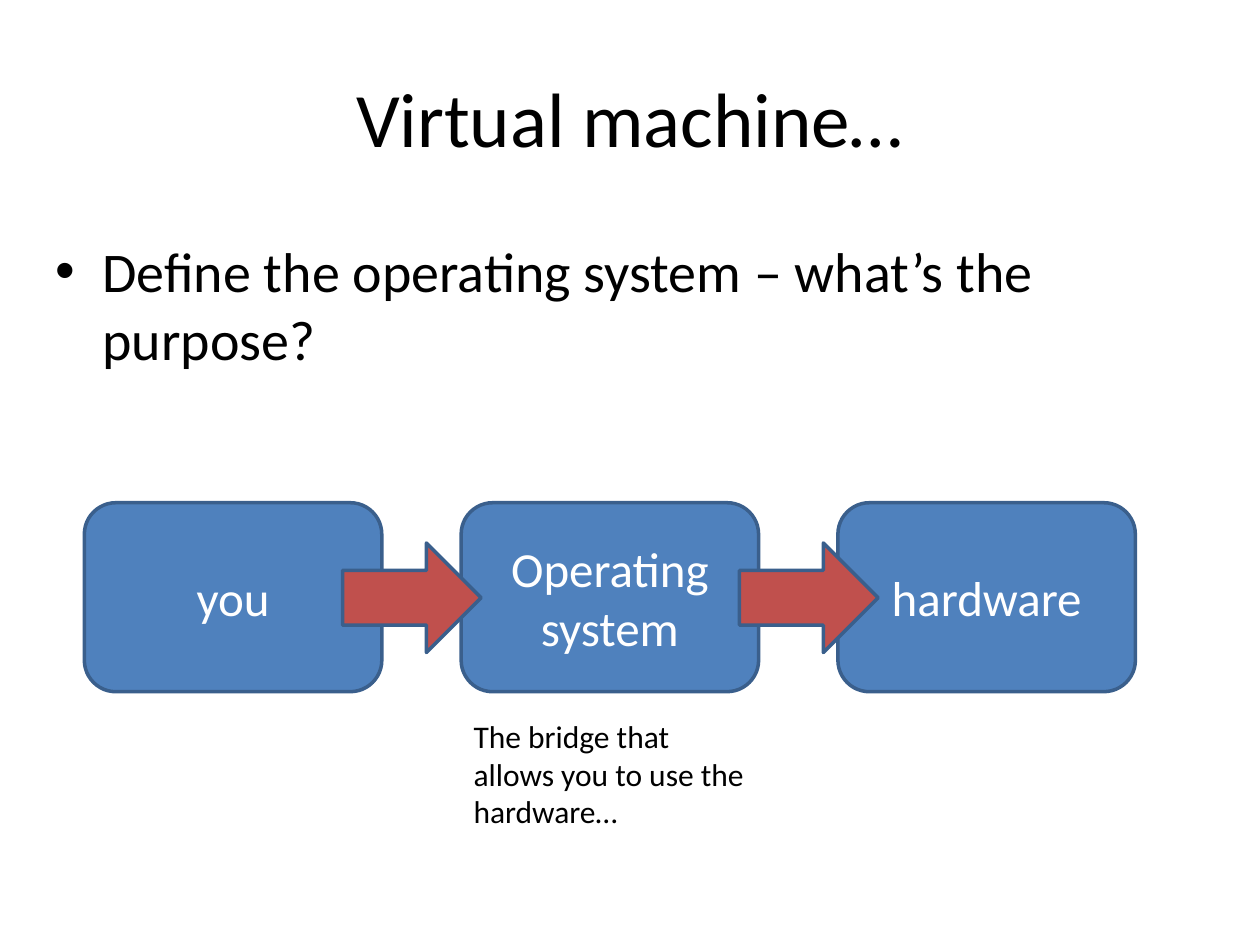
from lxml.etree import SubElement
from pptx import Presentation
from pptx.dml.color import RGBColor
from pptx.enum.shapes import MSO_SHAPE
from pptx.enum.text import MSO_ANCHOR, MSO_AUTO_SIZE, PP_ALIGN
from pptx.oxml.ns import qn
from pptx.util import Pt

# Content
TITLE = "Virtual machine…"
QUESTION = "Define the operating system – what’s the purpose?"
STAGES = ["you", "Operating system", "hardware"]
CAPTION = "The bridge that allows you to use the hardware…"

THEME = {
    "font": "Calibri",
    "text": "000000", "on_box": "FFFFFF",
    "box": "4F81BD", "arrow": "C0504D", "line": "3A5F8C", "line_width": 2,
    "title_size": 44, "body_size": 32, "box_size": 28, "caption_size": 18,
}

# Layout in points
BOX_X, BOX_Y, BOX_W, BOX_H, BOX_STEP = 48.2, 287.3, 170, 108, 215.3
ARROW_X, ARROW_Y, ARROW_W, ARROW_H, ARROW_STEP = 195.8, 310.3, 79.2, 62.6, 226.8
INDENT = 27


def write(shape, text, size, color=THEME["text"], align=PP_ALIGN.LEFT,
          anchor=MSO_ANCHOR.TOP):
    tf = shape.text_frame
    tf.word_wrap = True
    tf.vertical_anchor = anchor
    p = tf.paragraphs[0]
    p.alignment = align
    r = p.add_run()
    r.text = text
    r.font.name = THEME["font"]
    r.font.size = Pt(size)
    r.font.color.rgb = RGBColor.from_string(color)
    return p


def add_block(s, kind, x, y, w, h, fill):
    sp = s.shapes.add_shape(kind, Pt(x), Pt(y), Pt(w), Pt(h))
    sp.shadow.inherit = False
    sp.fill.solid()
    sp.fill.fore_color.rgb = RGBColor.from_string(fill)
    sp.line.color.rgb = RGBColor.from_string(THEME["line"])
    sp.line.width = Pt(THEME["line_width"])
    return sp


def main():
    prs = Presentation()
    prs.slide_width, prs.slide_height = Pt(720), Pt(540)
    s = prs.slides.add_slide(prs.slide_layouts[5])

    # Title
    title = s.shapes.title
    title.left, title.top, title.width, title.height = Pt(36), Pt(21.6), Pt(648), Pt(90)
    write(title, TITLE, THEME["title_size"], align=PP_ALIGN.CENTER,
          anchor=MSO_ANCHOR.MIDDLE)

    # Bulleted question
    body = s.shapes.add_textbox(Pt(24.5), Pt(131.8), Pt(648), Pt(356.4))
    p = write(body, QUESTION, THEME["body_size"])
    p.space_before = Pt(0.2 * THEME["body_size"])
    pPr = p._p.get_or_add_pPr()
    pPr.set("marL", str(Pt(INDENT)))
    pPr.set("indent", str(-Pt(INDENT)))
    SubElement(pPr, qn("a:buFont"), typeface="Arial")
    SubElement(pPr, qn("a:buChar"), char="•")

    # Stages from user to hardware
    for i, stage in enumerate(STAGES):
        box = add_block(s, MSO_SHAPE.ROUNDED_RECTANGLE, BOX_X + i * BOX_STEP, BOX_Y,
                        BOX_W, BOX_H, THEME["box"])
        write(box, stage, THEME["box_size"], color=THEME["on_box"],
              align=PP_ALIGN.CENTER, anchor=MSO_ANCHOR.MIDDLE)

    # Arrows between neighbouring stages
    for i in range(len(STAGES) - 1):
        add_block(s, MSO_SHAPE.RIGHT_ARROW, ARROW_X + i * ARROW_STEP, ARROW_Y,
                  ARROW_W, ARROW_H, THEME["arrow"])

    # Caption under the middle stage
    caption = s.shapes.add_textbox(Pt(BOX_X + BOX_STEP), Pt(406), Pt(BOX_W), Pt(72.7))
    write(caption, CAPTION, THEME["caption_size"])
    caption.text_frame.auto_size = MSO_AUTO_SIZE.SHAPE_TO_FIT_TEXT

    prs.save("out.pptx")


if __name__ == "__main__":
    main()
